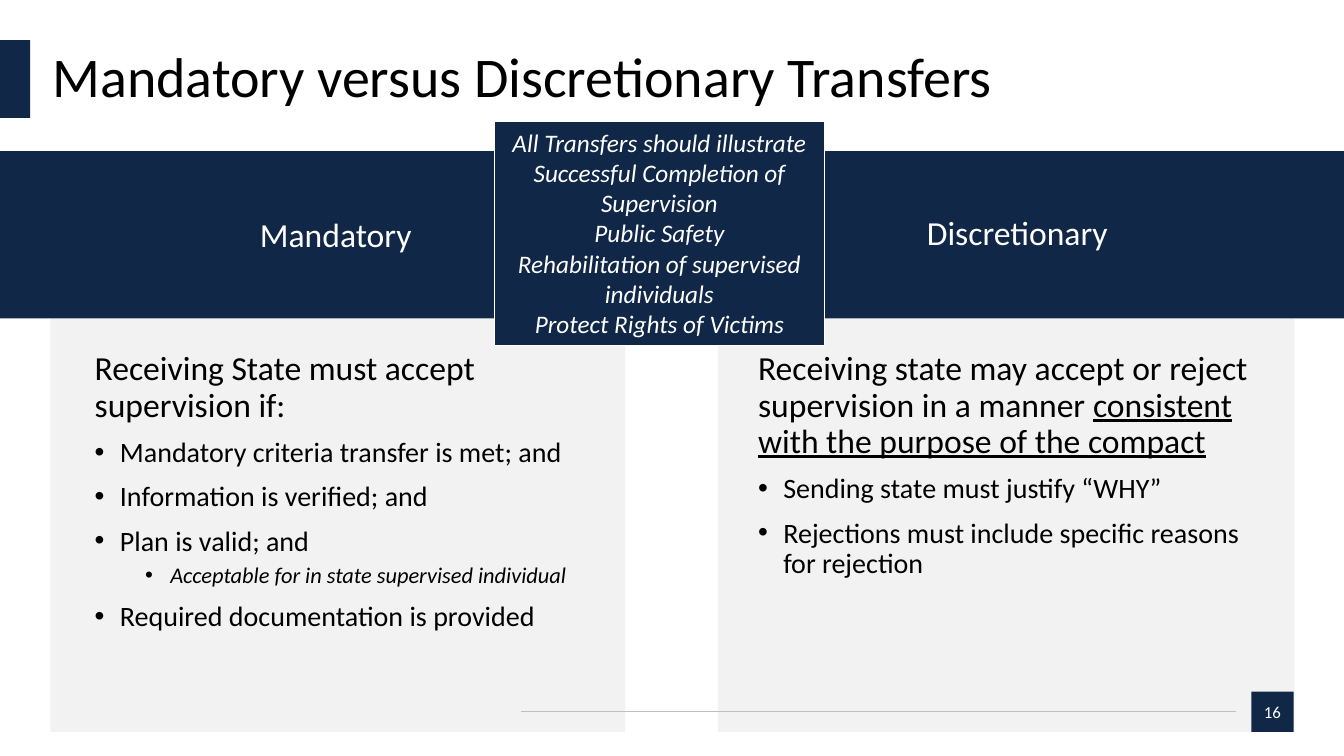
from dataclasses import dataclass, field
from typing import Any, NamedTuple

from lxml import etree
from pptx import Presentation, util as u
from pptx.dml import color
from pptx.enum import shapes, text
from pptx.oxml import ns

WIDE, HIGH = u.Inches(13.33), u.Inches(7.5)
HUES = {"navy": "102747", "pale": "F2F2F2", "rule": "BFBFBF", "white": "FFFFFF", "black": "000000"}
CENTER, MIDDLE = text.PP_ALIGN.CENTER, text.MSO_ANCHOR.MIDDLE
BARE = dict.fromkeys(("margin_left", "margin_top", "margin_right", "margin_bottom"), 0)


class Area(NamedTuple):
    """Left, top, width and height in percent of the slide."""
    x: float
    y: float
    w: float
    h: float


class Panel(NamedTuple):
    area: Area
    fill: str
    edge: str = ""


@dataclass
class Line:
    words: str
    size: float
    hue: str = "black"
    under: str = ""
    level: int = -1
    font: dict[str, Any] = field(default_factory=dict)
    form: dict[str, Any] = field(default_factory=dict)


class Label(NamedTuple):
    area: Area
    lines: list[Line]


def rgb(name: str) -> color.RGBColor:
    return color.RGBColor.from_string(HUES[name])


def across(share: float) -> int:
    return round(WIDE * share / 100)


def down(share: float) -> int:
    return round(HIGH * share / 100)


def place(area: Area) -> tuple[int, int, int, int]:
    return across(area.x), down(area.y), across(area.w), down(area.h)


def apply(target: Any, values: dict[str, Any]) -> None:
    for name, value in values.items():
        setattr(target, name, value)


def bullet(para: Any, level: int) -> None:
    props = para._p.get_or_add_pPr()
    props.set("marL", str(u.Inches(0.25 + 0.5 * level)))
    props.set("indent", str(u.Inches(-0.25)))
    etree.SubElement(props, ns.qn("a:buFont")).set("typeface", "Arial")
    etree.SubElement(props, ns.qn("a:buChar")).set("char", "•")


def write(frame: Any, lines: list[Line], **values: Any) -> None:
    apply(frame, {"word_wrap": True, **values})
    for spot, line in enumerate(lines):
        para = frame.add_paragraph() if spot else frame.paragraphs[0]
        if line.level >= 0:
            para.level = line.level
            bullet(para, line.level)
        apply(para, line.form)
        if not spot:
            para.space_before = u.Pt(0)
        for words, under in ((line.words, False), (line.under, True)):
            if words:
                run = para.add_run()
                run.text = words
                apply(run.font, {"name": "Calibri", "size": u.Pt(line.size),
                                 "underline": under, **line.font})
                run.font.color.rgb = rgb(line.hue)


def block(slide: Any, panel: Panel) -> Any:
    shape = slide.shapes.add_shape(shapes.MSO_SHAPE.RECTANGLE, *place(panel.area))
    shape.shadow.inherit = False
    shape.fill.solid()
    shape.fill.fore_color.rgb = rgb(panel.fill)
    if panel.edge:
        shape.line.color.rgb = rgb(panel.edge)
        shape.line.width = u.Pt(0.75)
    else:
        shape.line.fill.background()
    return shape


def rule(slide: Any, start: float, end: float, y: float) -> None:
    line = slide.shapes.add_connector(
        shapes.MSO_CONNECTOR.STRAIGHT, across(start), down(y), across(end), down(y))
    line.line.color.rgb = rgb("rule")
    line.line.width = u.Pt(0.5)
    etree.SubElement(line._element.spPr, ns.qn("a:effectLst"))


def item(words: str, under: str = "", size: float = 20, level: int = 0, **font: Any) -> Line:
    gap = u.Pt(5 if level > 0 else 10)
    return Line(words, size, under=under, level=level, font=font,
                form={"line_spacing": 0.9, "space_before": gap})


def lead(words: str, under: str = "") -> Line:
    return item(words, under, size=24, level=-1)


def light(words: str, size: float, spacing: float = 1.0, **font: Any) -> Line:
    return Line(words, size, "white", font=font,
                form={"alignment": CENTER, "line_spacing": spacing})


PANELS = [
    Panel(Area(53.41, 42.13, 42.91, 54.67), "pale"),
    Panel(Area(3.75, 42.13, 42.76, 54.67), "pale"),
    Panel(Area(0, 5.33, 2.25, 10.27), "navy"),
    Panel(Area(0, 20, 100, 22.13), "navy"),
]
LABELS = [
    Label(Area(6.9, 28.27, 36.16, 5.33), [light("Mandatory", 24)]),
    Label(Area(57.61, 28.67, 36.16, 4.8), [light("Discretionary", 24, 0.9)]),
    Label(Area(7.05, 46.53, 38.26, 46), [
        lead("Receiving State must accept supervision if:"),
        item("Mandatory criteria transfer is met; and"),
        item("Information is verified; and"),
        item("Plan is valid; and"),
        item("Acceptable for in state supervised individual", size=16, level=1, italic=True),
        item("Required documentation is provided"),
    ]),
    Label(Area(56.41, 46.53, 38.26, 37.07), [
        lead("Receiving state may accept or reject supervision in a manner ",
             "consistent with the purpose of the compact"),
        item("Sending state must justify “WHY”"),
        item("Rejections must include specific reasons for rejection"),
    ]),
]
NUMBER = Panel(Area(93.1, 91.47, 3.15, 5.33), "navy")
GOALS = Panel(Area(36.76, 16.13, 24.61, 29.6), "navy", "white")
AIMS = [
    "All Transfers should illustrate",
    "Successful Completion of Supervision",
    "Public Safety",
    "Rehabilitation of supervised individuals",
    "Protect Rights of Victims",
]


def main() -> None:
    deck = Presentation()
    deck.slide_width, deck.slide_height = WIDE, HIGH
    slide = deck.slides.add_slide(deck.slide_layouts[5])

    title = slide.shapes.title
    apply(title, dict(zip(("left", "top", "width", "height"),
                          place(Area(3.9, 5.33, 92.35, 10.27)))))
    heading = Line("Mandatory versus Discretionary Transfers", 40,
                   form={"alignment": text.PP_ALIGN.LEFT, "line_spacing": 0.9})
    write(title.text_frame, [heading], vertical_anchor=MIDDLE,
          auto_size=text.MSO_AUTO_SIZE.NONE, **BARE)

    for panel in PANELS:
        block(slide, panel)
    rule(slide, 38.78, 91.97, 94.13)
    write(block(slide, NUMBER).text_frame, [light("16", 12)],
          vertical_anchor=MIDDLE, **BARE)
    for label in LABELS:
        write(slide.shapes.add_textbox(*place(label.area)).text_frame, label.lines, **BARE)
    write(block(slide, GOALS).text_frame, [light(aim, 18, italic=True) for aim in AIMS],
          vertical_anchor=text.MSO_ANCHOR.TOP)
    deck.save("out.pptx")


if __name__ == "__main__":
    main()
